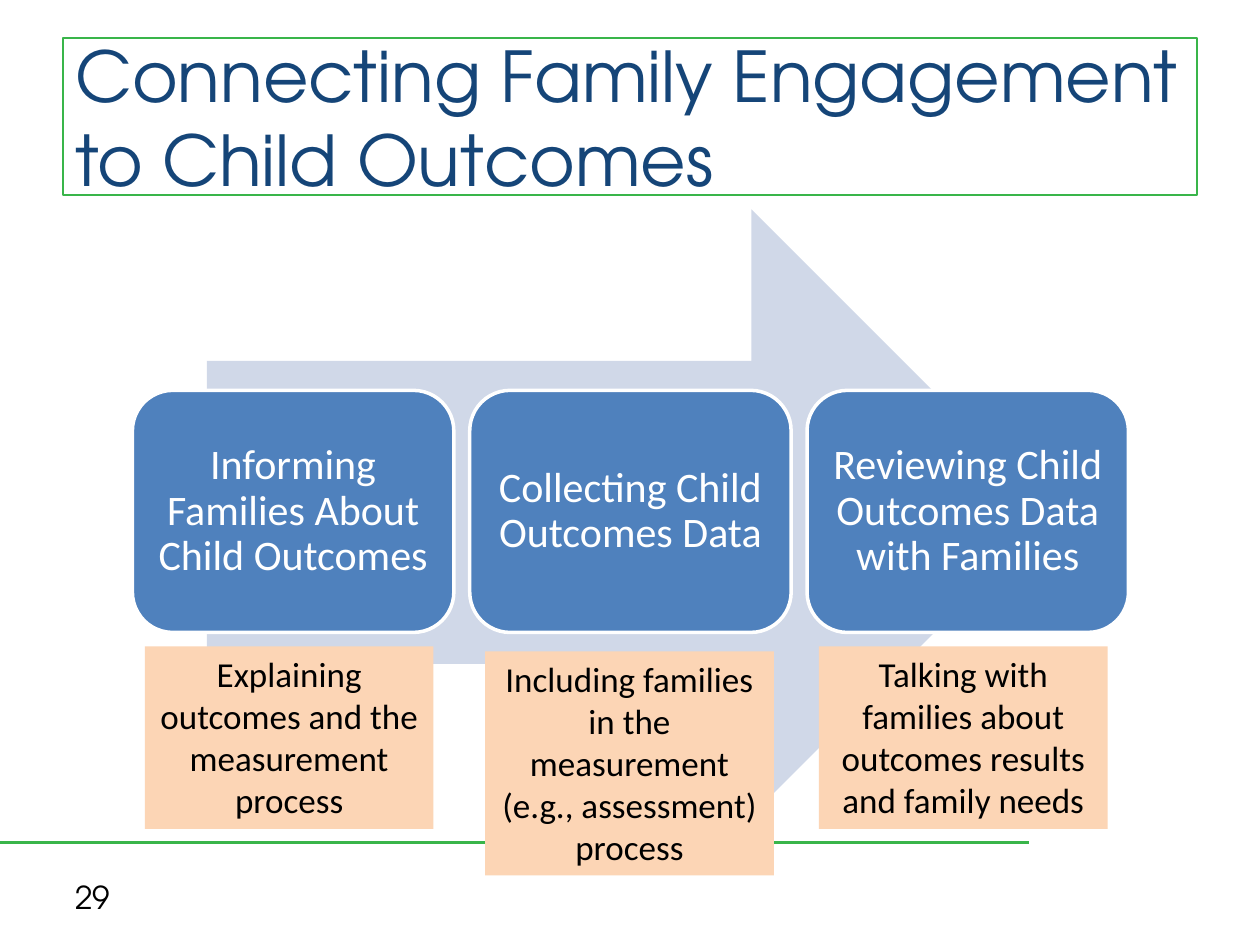
"""Build the slide on family engagement and child outcomes."""
import pptx
import pptx.util
import pptx.dml.color
import pptx.enum.shapes
import pptx.enum.text
import pptx.oxml.ns
import lxml.etree

Cm = pptx.util.Cm
Pt = pptx.util.Pt
KIND = pptx.enum.shapes.MSO_SHAPE
ALIGN = pptx.enum.text.PP_ALIGN
MID = pptx.enum.text.MSO_ANCHOR.MIDDLE
TOP = pptx.enum.text.MSO_ANCHOR.TOP

HEAD = "Connecting Family Engagement to Child Outcomes"
PAGE = "29"
STEPS = [
    "Informing Families About Child Outcomes",
    "Collecting Child Outcomes Data",
    "Reviewing Child Outcomes Data with Families",
]
NOTES = [
    ("Explaining outcomes and the measurement process", 2.92, 13.03, 3.68),
    ("Including families in the measurement (e.g., assessment) process",
     9.78, 13.13, 4.52),
    ("Talking with families about outcomes results and family needs",
     16.51, 13.03, 3.68),
]
SANS = "TeX Gyre Adventor"
BODY = "Calibri"
GREEN = "39B54A"
LEFT, PITCH = 2.67, 6.8


def tint(code):
    return pptx.dml.color.RGBColor.from_string(code)


def shape(slide, kind, area, fill=None, line=None, width=1):
    item = slide.shapes.add_shape(kind, *map(Cm, area))
    item.shadow.inherit = False
    if fill:
        item.fill.solid()
        item.fill.fore_color.rgb = tint(fill)
    else:
        item.fill.background()
    if line:
        item.line.color.rgb = tint(line)
        item.line.width = Pt(width)
    else:
        item.line.fill.background()
    return item


def write(item, text, size=20, font=BODY, color="000000",
          align=ALIGN.CENTER, anchor=MID, space=1.0, inset=None):
    frame = item.text_frame
    frame.word_wrap = True
    frame.vertical_anchor = anchor
    if inset is not None:
        frame.margin_left = frame.margin_right = Cm(inset)
        frame.margin_top = frame.margin_bottom = Cm(inset)
    para = frame.paragraphs[0]
    para.alignment = align
    para.line_spacing = space
    run = para.add_run()
    run.text = text
    run.font.size = Pt(size)
    run.font.name = font
    run.font.color.rgb = tint(color)


def rule(slide, end, y):
    line = slide.shapes.add_connector(
        pptx.enum.shapes.MSO_CONNECTOR.STRAIGHT, 0, Cm(y), Cm(end), Cm(y))
    line.line.color.rgb = tint(GREEN)
    line.line.width = Pt(1.5)
    props = line._element.spPr
    lxml.etree.SubElement(props, pptx.oxml.ns.qn("a:effectLst"))


def main():
    deck = pptx.Presentation()
    deck.slide_width, deck.slide_height = Cm(25.4), Cm(19.05)
    slide = deck.slides.add_slide(deck.slide_layouts[6])

    rule(slide, 20.75, 16.99)
    page = slide.shapes.add_textbox(*map(Cm, (1.27, 17.58, 5.92, 1.02)))
    write(page, PAGE, size=18, font=SANS, align=ALIGN.LEFT)
    title = shape(slide, KIND.RECTANGLE, (1.27, 0.76, 22.86, 3.18), line=GREEN)
    write(title, HEAD, size=40, font=SANS, color="154578", align=ALIGN.LEFT)

    shape(slide, KIND.RIGHT_ARROW, (4.17, 4.22, 17.09, 12.22), "D0D8E8")
    for i, text in enumerate(STEPS):
        area = (LEFT + i * PITCH, 7.87, 6.48, 4.88)
        step = shape(slide, KIND.ROUNDED_RECTANGLE, area,
                     "4F81BD", "FFFFFF", 2)
        write(step, text, size=24, color="FFFFFF", space=0.9, inset=0.25)
    for text, x, y, high in NOTES:
        note = shape(slide, KIND.RECTANGLE, (x, y, 5.82, high), "FCD5B5")
        write(note, text, anchor=TOP)

    deck.save("out.pptx")


if __name__ == "__main__":
    main()
